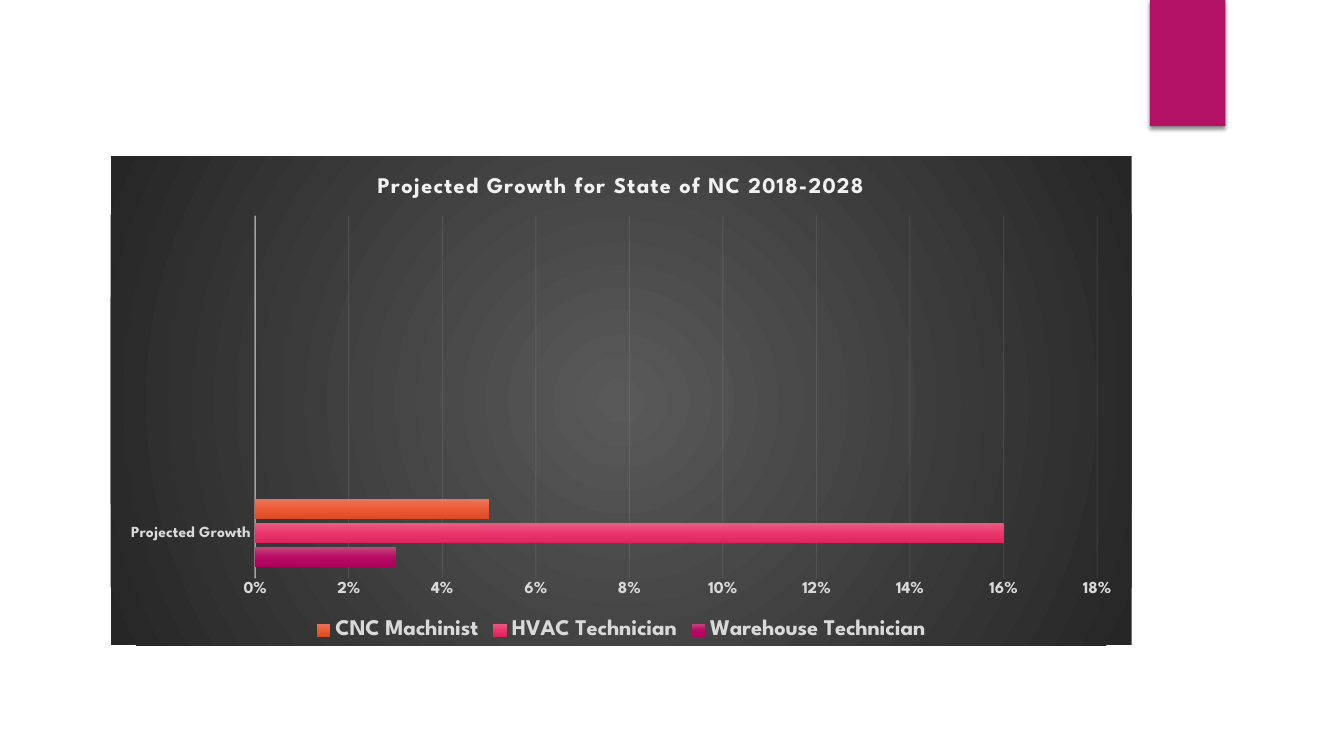
from lxml.etree import SubElement
from pptx import Presentation
from pptx.chart.data import CategoryChartData
from pptx.dml.color import RGBColor
from pptx.enum.chart import XL_CHART_TYPE as ChartType, XL_LEGEND_POSITION as LegendPosition
from pptx.enum.chart import XL_TICK_MARK as TickMark
from pptx.enum.shapes import MSO_SHAPE as Shape
from pptx.oxml import parse_xml
from pptx.oxml.ns import nsdecls, qn
from pptx.util import Cm, Pt

FONT = "League Spartan"
COLORS = {"accent": "B31166", "title": "F2F2F2", "label": "D9D9D9", "line": "F2F2F2", "shadow": "000000"}
TITLE = "Projected Growth for State of NC 2018-2028"
CATEGORIES = ["Projected Growth", "", "", ""]
SERIES = [
    ("Warehouse Technician", 0.03, ["BE4C79", "BB0966", "AD015B"]),
    ("HVAC Technician", 0.16, ["E85D81", "EB356C", "DB255C"]),
    ("CNC Machinist", 0.05, ["E9745D", "EC5A34", "DC4A24"]),
]
BACKDROP = ["595959", "262626"]
LINEAR = '<a:lin ang="5400000" scaled="0"/>'
RADIAL = '<a:path path="circle"><a:fillToRect l="50000" t="50000" r="50000" b="50000"/></a:path>'
CHART_FRAME = (Cm(2.79), Cm(3.94), Cm(25.73), Cm(12.32))
TAB_FRAME = (Cm(28.98), Cm(0), Cm(1.9), Cm(3.18))


def gradient(colors, direction):
    step = 100000 // (len(colors) - 1)
    stops = "".join(
        f'<a:gs pos="{index * step}"><a:srgbClr val="{color}"/></a:gs>'
        for index, color in enumerate(colors)
    )
    return parse_xml(
        f'<a:gradFill {nsdecls("a")} rotWithShape="1"><a:gsLst>{stops}</a:gsLst>{direction}</a:gradFill>'
    )


def style_font(font, size, color):
    for name, value in {"name": FONT, "size": Pt(size), "bold": True}.items():
        setattr(font, name, value)
    font.color.rgb = RGBColor.from_string(COLORS[color])


def style_line(line, width, opacity):
    line.width = Pt(width)
    line.color.rgb = RGBColor.from_string(COLORS["line"])
    color = next(line.fill._xPr.iter(qn("a:srgbClr")))
    SubElement(color, qn("a:alpha"), val=str(opacity * 1000))


def add_corner_tab(page):
    tab = page.shapes.add_shape(Shape.RECTANGLE, *TAB_FRAME)
    tab.shadow.inherit = False
    tab.fill.solid()
    tab.fill.fore_color.rgb = RGBColor.from_string(COLORS["accent"])
    tab.line.fill.background()
    effects = tab._element.spPr.find(qn("a:effectLst"))
    shadow = SubElement(effects, qn("a:outerShdw"), blurRad=str(Pt(3)), dist=str(Pt(2)),
                        dir="5400000", rotWithShape="0")
    color = SubElement(shadow, qn("a:srgbClr"), val=COLORS["shadow"])
    SubElement(color, qn("a:alpha"), val="45000")


def add_growth_chart(page):
    data = CategoryChartData(number_format="0%")
    data.categories = CATEGORIES
    for name, growth, colors in SERIES:
        data.add_series(name, [growth, None, None, None])
    chart = page.shapes.add_chart(ChartType.BAR_CLUSTERED, *CHART_FRAME, data).chart
    chart.font.name = FONT
    chart.font.size = Pt(10)

    backdrop = parse_xml(f'<c:spPr {nsdecls("c", "a")}><a:ln><a:noFill/></a:ln></c:spPr>')
    backdrop.insert(0, gradient(BACKDROP, RADIAL))
    chart._chartSpace.find(qn("c:chart")).addnext(backdrop)

    chart.has_title = True
    chart.chart_title.include_in_layout = False
    para = chart.chart_title.text_frame.paragraphs[0]
    span = para.add_run()
    span.text = TITLE
    style_font(span.font, 16, "title")
    span.font._element.set("spc", "100")

    chart.has_legend = True
    chart.legend.position = LegendPosition.BOTTOM
    chart.legend.include_in_layout = False
    style_font(chart.legend.font, 16, "label")

    plot = chart.plots[0]
    for name, value in {"gap_width": 115, "overlap": -20, "vary_by_categories": False}.items():
        setattr(plot, name, value)
    for series, (name, growth, colors) in zip(plot.series, SERIES):
        series.invert_if_negative = False
        series._element.get_or_add_spPr().append(gradient(colors, LINEAR))

    for axis, size in ((chart.category_axis, 11), (chart.value_axis, 12)):
        axis.major_tick_mark = axis.minor_tick_mark = TickMark.NONE
        style_font(axis.tick_labels.font, size, "label")
    style_line(chart.category_axis.format.line, 1, 54)
    scale = {"minimum_scale": 0, "maximum_scale": 0.18, "major_unit": 0.02, "has_major_gridlines": True}
    for name, value in scale.items():
        setattr(chart.value_axis, name, value)
    chart.value_axis.format.line.fill.background()
    style_line(chart.value_axis.major_gridlines.format.line, 0.75, 10)
    chart.value_axis.tick_labels.number_format = "0%"
    chart.value_axis.tick_labels.number_format_is_linked = False


def main():
    deck = Presentation()
    deck.slide_width, deck.slide_height = Cm(33.87), Cm(19.05)
    page = deck.slides.add_slide(deck.slide_layouts[6])
    add_corner_tab(page)
    add_growth_chart(page)
    deck.save("out.pptx")


if __name__ == "__main__":
    main()
